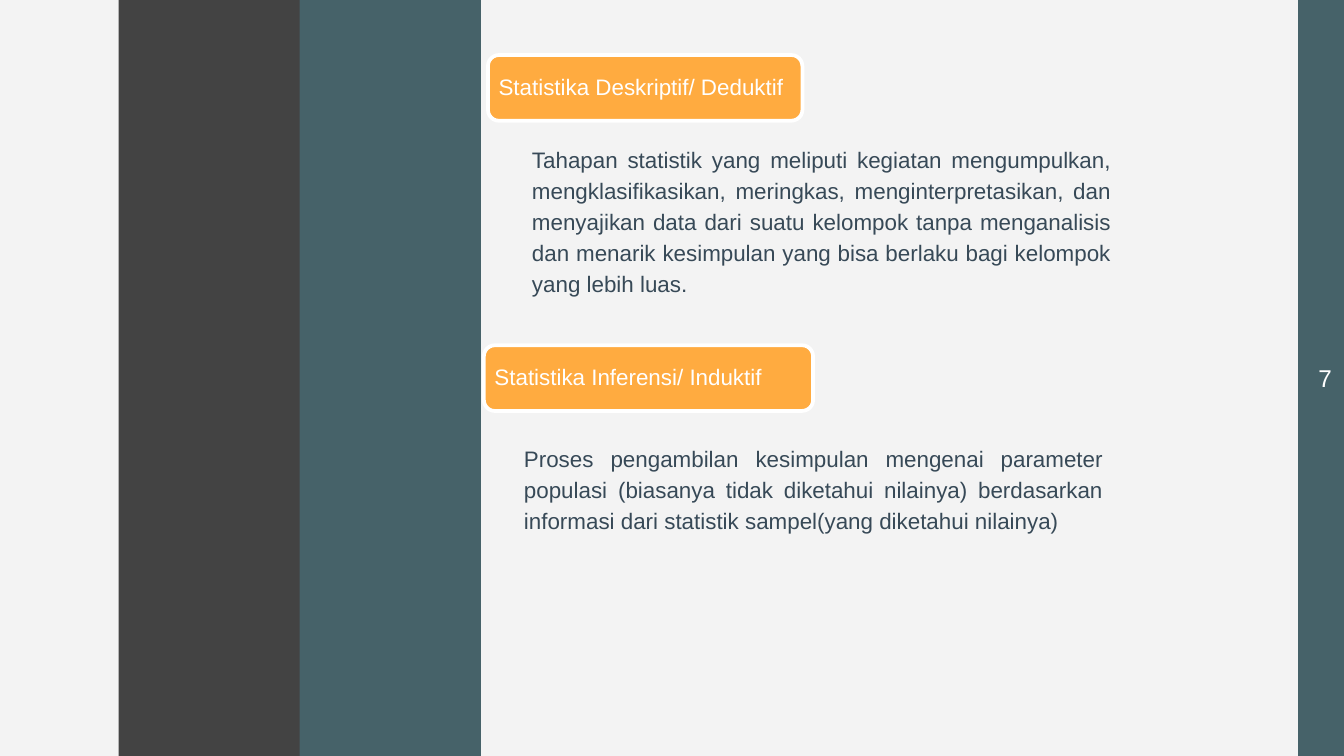
import pptx
import pptx.util
import pptx.dml.color
import pptx.enum.shapes
import pptx.enum.text

Pt = pptx.util.Pt
ALIGN = pptx.enum.text.PP_ALIGN
SHAPES = pptx.enum.shapes.MSO_SHAPE

COLORS = {"background": "F3F3F3", "dark": "434343", "teal": "466269",
          "orange": "FFAB40", "white": "FFFFFF", "body": "374957"}
WIDTH, HEIGHT = 720, 405

# left, width, color
BANDS = [(63.6, 97.2, "dark"), (160.5, 97.2, "teal"), (695.5, 24.5, "teal")]

# Boxes are left, top, width, height
SECTIONS = [
    {"heading": "Statistika Deskriptif/ Deduktif",
     "heading_box": (261.4, 29.5, 168.5, 35.2),
     "body": "Tahapan statistik yang meliputi kegiatan mengumpulkan, "
             "mengklasifikasikan, meringkas, menginterpretasikan, dan menyajikan "
             "data dari suatu kelompok tanpa menganalisis dan menarik kesimpulan "
             "yang bisa berlaku bagi kelompok yang lebih luas.",
     "body_box": (277.9, 69.1, 324.7, 89.3)},
    {"heading": "Statistika Inferensi/ Induktif",
     "heading_box": (259.2, 185, 176.4, 35.2),
     "body": "Proses pengambilan kesimpulan mengenai parameter populasi "
             "(biasanya tidak diketahui nilainya) berdasarkan informasi dari "
             "statistik sampel(yang diketahui nilainya)",
     "body_box": (273.6, 229, 324.7, 54.7)},
]
PAGE_NUMBER = "7"
PAGE_NUMBER_BOX = (688.3, 187.2, 43.2, 31)


def rgb(name):
    return pptx.dml.color.RGBColor.from_string(COLORS[name])


def add_box(slide, kind, box, fill):
    shape = slide.shapes.add_shape(kind, *map(Pt, box))
    shape.shadow.inherit = False
    shape.fill.solid()
    shape.fill.fore_color.rgb = rgb(fill)
    shape.line.fill.background()
    return shape


def write(shape, text, size, color, alignment, spacing, insets):
    """Fill a shape with one paragraph; insets are left, top, right, bottom."""
    frame = shape.text_frame
    frame.word_wrap = True
    (frame.margin_left, frame.margin_top,
     frame.margin_right, frame.margin_bottom) = map(Pt, insets)
    paragraph = frame.paragraphs[0]
    paragraph.text = text
    paragraph.alignment = alignment
    paragraph.line_spacing = spacing
    paragraph.font.name = "Arial"
    paragraph.font.size = Pt(size)
    paragraph.font.color.rgb = rgb(color)


def add_text(slide, box, *style):
    write(slide.shapes.add_textbox(*map(Pt, box)), *style, (7.2,) * 4)


def add_heading(slide, box, text):
    shape = add_box(slide, SHAPES.ROUNDED_RECTANGLE, box, "orange")
    shape.line.color.rgb = rgb("white")
    shape.line.width = Pt(2)
    shape.text_frame.vertical_anchor = pptx.enum.text.MSO_ANCHOR.MIDDLE
    write(shape, text, 12, "white", ALIGN.LEFT, 0.9, (4, 3.6, 2, 3.6))


def main():
    presentation = pptx.Presentation()
    presentation.slide_width, presentation.slide_height = Pt(WIDTH), Pt(HEIGHT)
    slide = presentation.slides.add_slide(presentation.slide_layouts[6])
    slide.background.fill.solid()
    slide.background.fill.fore_color.rgb = rgb("background")

    for left, width, color in BANDS:
        add_box(slide, SHAPES.RECTANGLE, (left, 0, width, HEIGHT), color)
    add_text(slide, PAGE_NUMBER_BOX, PAGE_NUMBER, 13, "white", ALIGN.CENTER, 1.0)
    for section in SECTIONS:
        add_heading(slide, section["heading_box"], section["heading"])
        add_text(slide, section["body_box"], section["body"],
                 12, "body", ALIGN.JUSTIFY, 1.15)

    presentation.save("out.pptx")


if __name__ == "__main__":
    main()
